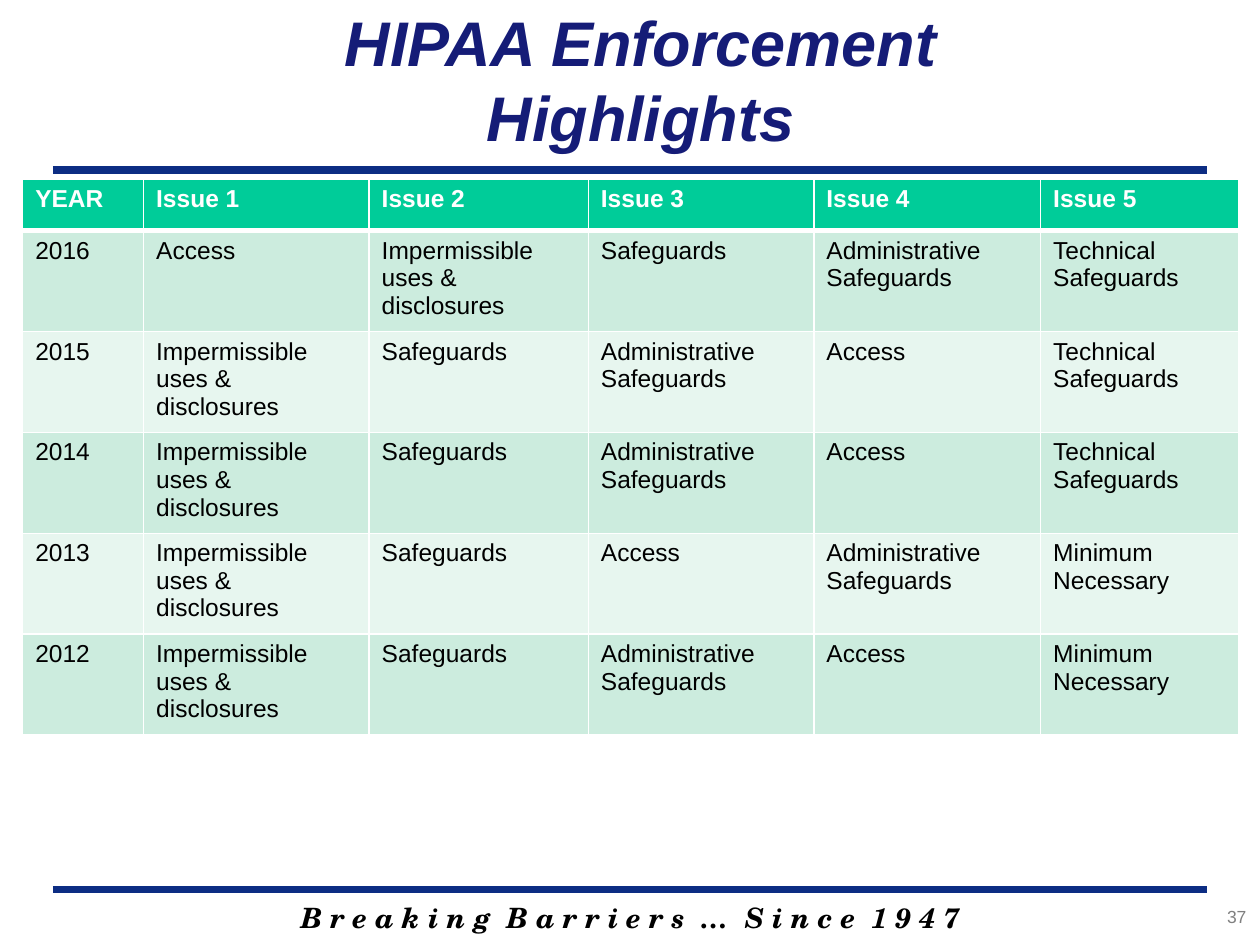
from lxml.etree import SubElement
from pptx import Presentation
from pptx.dml.color import RGBColor
from pptx.enum.shapes import MSO_CONNECTOR
from pptx.enum.text import MSO_ANCHOR, PP_ALIGN
from pptx.oxml.ns import qn
from pptx.util import Inches, Pt

IMPERMISSIBLE = "Impermissible uses & disclosures"
ADMIN = "Administrative Safeguards"
TECHNICAL = "Technical Safeguards"
MINIMUM = "Minimum Necessary"

ISSUES = [
    ["YEAR"] + [f"Issue {n}" for n in range(1, 6)],
    ["2016", "Access", IMPERMISSIBLE, "Safeguards", ADMIN, TECHNICAL],
    ["2015", IMPERMISSIBLE, "Safeguards", ADMIN, "Access", TECHNICAL],
    ["2014", IMPERMISSIBLE, "Safeguards", ADMIN, "Access", TECHNICAL],
    ["2013", IMPERMISSIBLE, "Safeguards", "Access", ADMIN, MINIMUM],
    ["2012", IMPERMISSIBLE, "Safeguards", ADMIN, "Access", MINIMUM],
]
COLUMN_WIDTHS = [0.96, 1.79, 1.74, 1.79, 1.8, 1.57]


def color(value):
    return RGBColor.from_string(value)


def letterspace(text):
    """Put a space between letters and two between words."""
    return "  ".join(" ".join(word) for word in text.split())


class SlideBuilder:
    FONT = "Arial"
    RULE = "0C2D83"
    HEADER = "00CC99"
    BANDS = ("E7F6EF", "CCECDE")
    BORDER = "FFFFFF"

    def __init__(self, slide):
        self.s = slide

    def format_runs(self, p, size, hex_color, bold=False, italic=False, font=FONT):
        for r in p.runs:
            r.font.name = font
            r.font.size = Pt(size)
            r.font.bold = bold
            r.font.italic = italic
            r.font.color.rgb = color(hex_color)

    def text(self, text, box, align, anchor=MSO_ANCHOR.TOP, **style):
        sp = self.s.shapes.add_textbox(*map(Inches, box))
        tf = sp.text_frame
        tf.word_wrap = True
        tf.vertical_anchor = anchor
        p = tf.paragraphs[0]
        p.text = text
        p.alignment = align
        self.format_runs(p, **style)

    def rule(self, y):
        line = self.s.shapes.add_connector(
            MSO_CONNECTOR.STRAIGHT, Inches(0.42), Inches(y), Inches(9.58), Inches(y))
        line.line.color.rgb = color(self.RULE)
        line.line.width = Pt(4.5)
        SubElement(line._element.spPr, qn("a:effectLst"))

    def border(self, cell, bottom):
        """Line all four sides of a cell; bottom is that side's width in points."""
        tcPr = cell._tc.get_or_add_tcPr()
        for side, width in (("L", 1), ("R", 1), ("T", 1), ("B", bottom)):
            ln = SubElement(tcPr, qn(f"a:ln{side}"), w=str(Pt(width)))
            fill = SubElement(ln, qn("a:solidFill"))
            SubElement(fill, qn("a:srgbClr"), val=self.BORDER)

    def table(self, rows, left, top, widths, header_height, row_height):
        height = header_height + row_height * (len(rows) - 1)
        table = self.s.shapes.add_table(
            len(rows), len(widths), Inches(left), Inches(top),
            Inches(sum(widths)), Inches(height)).table
        for column, width in zip(table.columns, widths):
            column.width = Inches(width)
        for i, values in enumerate(rows):
            header = i == 0
            table.rows[i].height = Inches(header_height if header else row_height)
            for j, value in enumerate(values):
                cell = table.cell(i, j)
                cell.text = value
                self.format_runs(cell.text_frame.paragraphs[0], 14,
                                 "FFFFFF" if header else "000000", bold=header)
                self.border(cell, bottom=3 if header else 1)
                cell.fill.solid()
                cell.fill.fore_color.rgb = color(
                    self.HEADER if header else self.BANDS[i % 2])


def main():
    prs = Presentation()
    prs.slide_width, prs.slide_height = Inches(10), Inches(7.5)
    slide = SlideBuilder(prs.slides.add_slide(prs.slide_layouts[6]))

    slide.text(letterspace("Breaking Barriers … Since 1947"), (1.42, 7.1, 7.17, 0.37),
               PP_ALIGN.CENTER, size=16, hex_color="000000", bold=True, italic=True,
               font="TeX Gyre Schola")
    for y in (7.06, 1.35):
        slide.rule(y)
    slide.text("HIPAA Enforcement\vHighlights", (1.5, 0, 7.17, 1.25), PP_ALIGN.CENTER,
               MSO_ANCHOR.MIDDLE, size=36, hex_color="151C77", bold=True, italic=True)
    slide.text("37", (8.74, 7.14, 1.25, 0.33), PP_ALIGN.RIGHT, size=10, hex_color="808080")
    slide.table(ISSUES, 0.18, 1.42, COLUMN_WIDTHS, header_height=0.41, row_height=0.75)

    prs.save("out.pptx")


if __name__ == "__main__":
    main()
